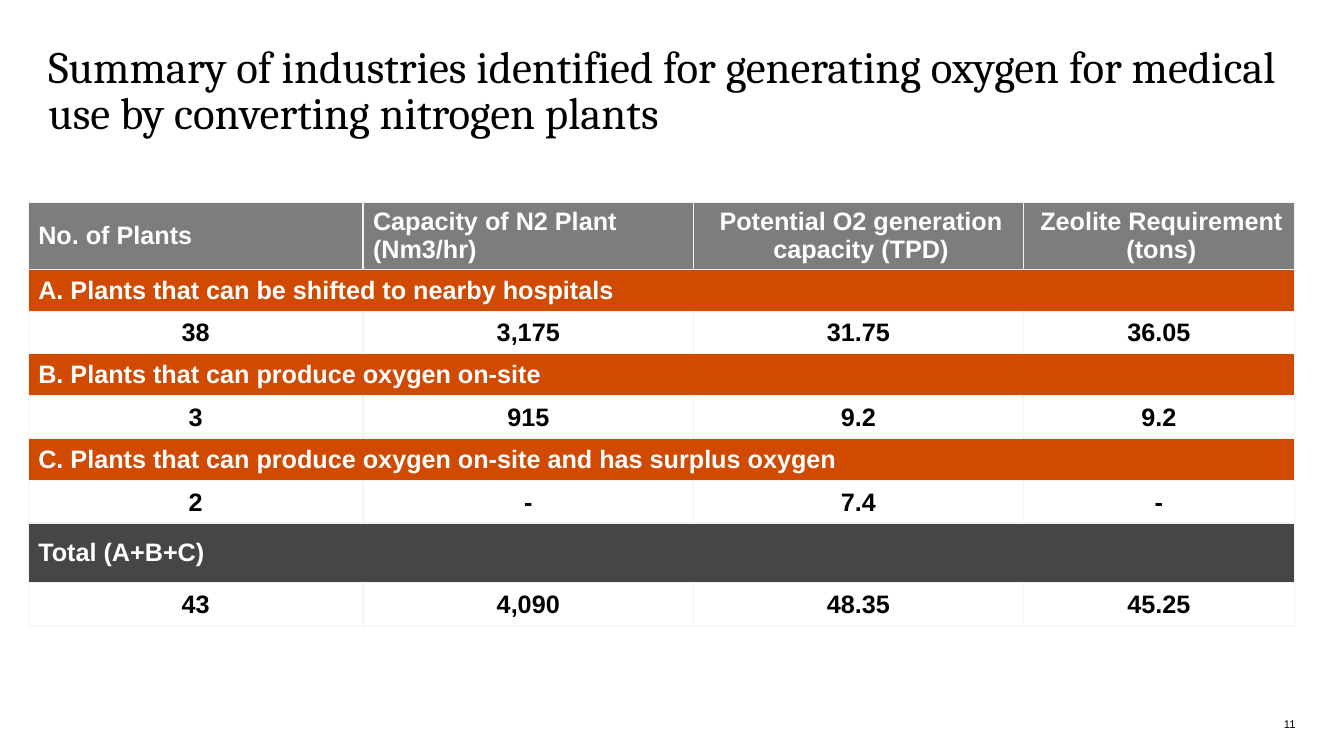
from lxml import etree
from pptx import Presentation
from pptx.dml.color import RGBColor
from pptx.enum.text import MSO_ANCHOR, PP_ALIGN
from pptx.oxml.ns import qn
from pptx.util import Inches, Pt

LEFT, CENTER, RIGHT = PP_ALIGN.LEFT, PP_ALIGN.CENTER, PP_ALIGN.RIGHT
TOP, MIDDLE, BOTTOM = MSO_ANCHOR.TOP, MSO_ANCHOR.MIDDLE, MSO_ANCHOR.BOTTOM

COLORS = {"black": "000000", "white": "FFFFFF", "header": "7D7D7D",
          "group": "D04A02", "total": "464646", "border": "F2F2F2"}

TITLE = ("Summary of industries identified for generating oxygen "
         "for medical use by converting nitrogen plants")
PAGE = "11"
HEADERS = ["No. of Plants", "Capacity of N2 Plant (Nm3/hr)",
           "Potential O2 generation capacity (TPD)", "Zeolite Requirement (tons)"]
HEADER_ALIGNS = [LEFT, LEFT, CENTER, CENTER]
SECTIONS = [
    ("A. Plants that can be shifted to nearby hospitals", "group",
     ["38", "3,175", "31.75", "36.05"]),
    ("B. Plants that can produce oxygen on-site", "group",
     ["3", "915", "9.2", "9.2"]),
    ("C. Plants that can produce oxygen on-site and has surplus oxygen", "group",
     ["2", "-", "7.4", "-"]),
    ("Total (A+B+C)", "total", ["43", "4,090", "48.35", "45.25"]),
]
COL_WIDTHS = [3.32, 3.28, 3.27, 2.69]
ROW_HEIGHTS = [0.65] + [0.42] * 6 + [0.59, 0.44]
TABLE_LEFT, TABLE_TOP = 0.28, 2.01
LABEL_MARGINS = (0.1, 0.03, 0.05, 0.03)
VALUE_MARGINS = (0.01, 0.01, 0.01, 0)


def rgb(name):
    return RGBColor.from_string(COLORS[name])


def add_run(p, text, size, font, color, bold=False):
    r = p.add_run()
    r.text = text
    r.font.size, r.font.name, r.font.bold = Pt(size), font, bold
    r.font.color.rgb = rgb(color)


def add_text(s, box, text, size, font, align, anchor, spacing):
    tf = s.shapes.add_textbox(*map(Inches, box)).text_frame
    tf.word_wrap, tf.vertical_anchor = True, anchor
    tf.margin_left = tf.margin_top = tf.margin_right = tf.margin_bottom = 0
    p = tf.paragraphs[0]
    p.alignment, p.line_spacing = align, spacing
    add_run(p, text, size, font, "black")


def set_borders(cell):
    tc_pr = cell._tc.get_or_add_tcPr()
    for side in ("lnL", "lnR", "lnT", "lnB"):
        ln = etree.SubElement(tc_pr, qn(f"a:{side}"), w=str(Pt(1)))
        fill = etree.SubElement(ln, qn("a:solidFill"))
        etree.SubElement(fill, qn("a:srgbClr"), val=COLORS["border"])


def fill_cell(cell, text, fill, color, align, margins):
    cell.fill.solid()
    cell.fill.fore_color.rgb = rgb(fill)
    cell.vertical_anchor = MIDDLE
    (cell.margin_left, cell.margin_top,
     cell.margin_right, cell.margin_bottom) = map(Inches, margins)
    p = cell.text_frame.paragraphs[0]
    p.alignment = align
    add_run(p, text, 18, "Arial", color, bold=True)


def add_summary_table(s):
    size = (len(ROW_HEIGHTS), len(COL_WIDTHS))
    box = (TABLE_LEFT, TABLE_TOP, sum(COL_WIDTHS), sum(ROW_HEIGHTS))
    table = s.shapes.add_table(*size, *map(Inches, box)).table
    table.first_row = table.horz_banding = False
    for col, width in zip(table.columns, COL_WIDTHS):
        col.width = Inches(width)
    for row, height in zip(table.rows, ROW_HEIGHTS):
        row.height = Inches(height)
    for cell in table.iter_cells():
        set_borders(cell)

    for c, (text, align) in enumerate(zip(HEADERS, HEADER_ALIGNS)):
        fill_cell(table.cell(0, c), text, "header", "white", align, LABEL_MARGINS)
    for i, (label, fill, values) in enumerate(SECTIONS):
        row = 1 + 2 * i
        band = table.cell(row, 0)
        band.merge(table.cell(row, len(COL_WIDTHS) - 1))
        fill_cell(band, label, fill, "white", LEFT, LABEL_MARGINS)
        for c, value in enumerate(values):
            fill_cell(table.cell(row + 1, c), value, "white", "black",
                      CENTER, VALUE_MARGINS)


def main():
    prs = Presentation()
    prs.slide_width, prs.slide_height = Inches(13.33), Inches(7.5)
    s = prs.slides.add_slide(prs.slide_layouts[6])
    add_text(s, (0.48, 0.47, 12.36, 0.9), TITLE, 32, "Cambria", LEFT, TOP, 0.85)
    add_text(s, (8.99, 7.1, 3.86, 0.15), PAGE, 8, "Arial", RIGHT, BOTTOM, 1.0)
    add_summary_table(s)
    prs.save("out.pptx")


if __name__ == "__main__":
    main()
